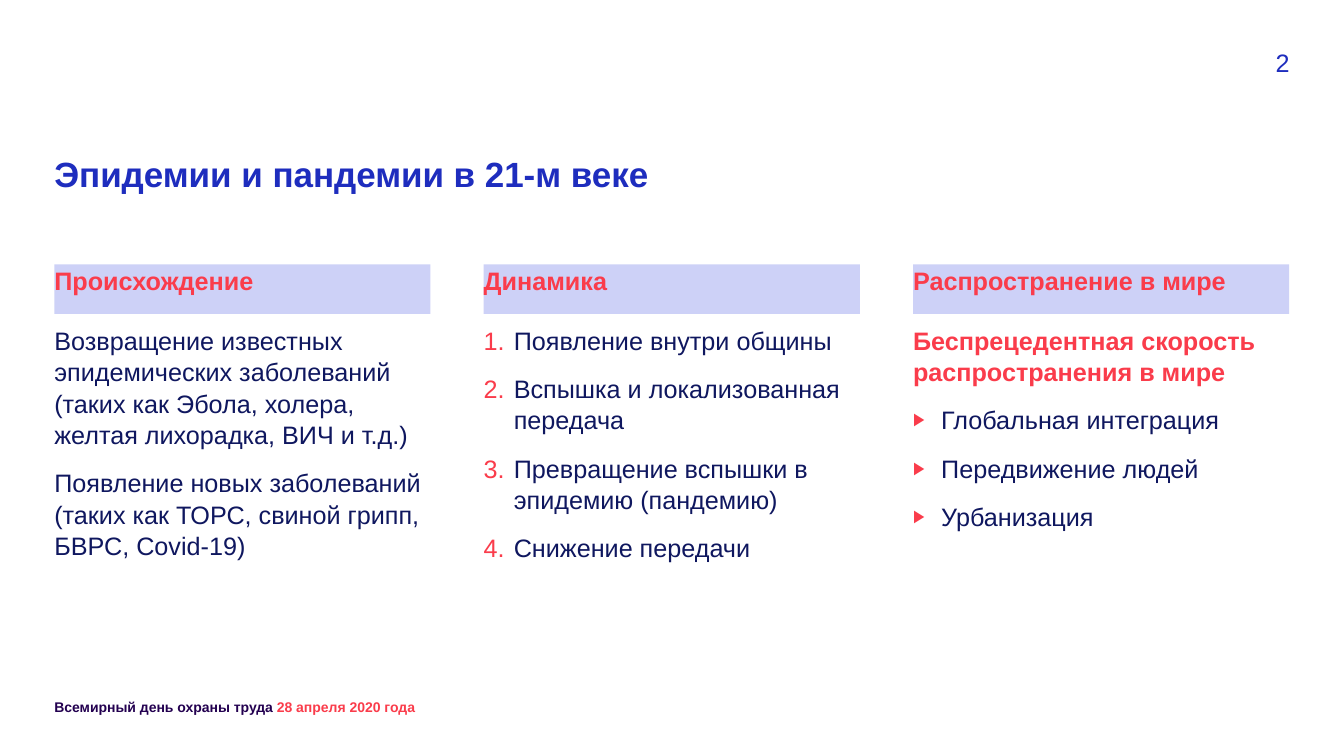
from dataclasses import dataclass

from lxml import etree
from pptx import Presentation
from pptx.dml.color import RGBColor
from pptx.enum.shapes import MSO_SHAPE
from pptx.enum.text import MSO_ANCHOR, PP_ALIGN
from pptx.oxml.ns import qn
from pptx.util import Cm, Pt

RECTANGLE = MSO_SHAPE.RECTANGLE
TOP = MSO_ANCHOR.TOP
LEFT, RIGHT = PP_ALIGN.LEFT, PP_ALIGN.RIGHT


@dataclass(frozen=True)
class Theme:
    """Colours, typeface and type sizes of the slide."""
    font: str = "Arial"
    blue: str = "1E2DBE"
    navy: str = "0F175F"
    purple: str = "230050"
    red: str = "FA3C4B"
    lavender: str = "CDD1F7"
    title_size: int = 25
    body_size: int = 18
    footer_size: int = 10


THEME = Theme()
MARKERS = {
    "number": (0.76, [("buFont", {"typeface": "+mj-lt"}),
                      ("buAutoNum", {"type": "arabicPeriod"})]),
    "arrow": (0.71, [("buSzPct", {"val": "70000"}),
                     ("buFont", {"typeface": "Arial"}),
                     ("buChar", {"char": "▶"})]),
}
COLUMNS = [
    ("Происхождение", [
        ("plain", "Возвращение известных эпидемических заболеваний "
                  "(таких как Эбола, холера, желтая лихорадка, ВИЧ и т.д.)"),
        ("plain", "Появление новых заболеваний "
                  "(таких как ТОРС, свиной грипп, БВРС, Covid-19)"),
    ]),
    ("Динамика", [
        ("number", "Появление внутри общины"),
        ("number", "Вспышка и локализованная передача"),
        ("number", "Превращение вспышки в эпидемию (пандемию)"),
        ("number", "Снижение передачи"),
    ]),
    ("Распространение в мире", [
        ("lead", "Беспрецедентная скорость распространения в мире"),
        ("arrow", "Глобальная интеграция"),
        ("arrow", "Передвижение людей"),
        ("arrow", "Урбанизация"),
    ]),
]


def prepare_frame(shape):
    """Return the shape's text frame, wrapped and without margins."""
    frame = shape.text_frame
    frame.word_wrap = True
    frame.vertical_anchor = TOP
    frame.margin_left = frame.margin_right = 0
    frame.margin_top = frame.margin_bottom = 0
    return frame


def add_frame(page, box):
    """Add a text box at left, top, width, height in centimetres."""
    return prepare_frame(page.shapes.add_textbox(*map(Cm, box)))


def style_para(para, size, color, bold=False, align=LEFT):
    """Set the alignment and font of a paragraph."""
    para.alignment = align
    para.font.name = THEME.font
    para.font.size = Pt(size)
    para.font.bold = bold
    para.font.color.rgb = RGBColor.from_string(color)


def add_marker(para, kind):
    """Give a paragraph a hanging red number or arrow."""
    indent, parts = MARKERS[kind]
    properties = para._p.get_or_add_pPr()
    properties.set("marL", str(Cm(indent)))
    properties.set("indent", str(-Cm(indent)))
    color = etree.SubElement(properties, qn("a:buClr"))
    etree.SubElement(color, qn("a:srgbClr"), val=THEME.red)
    for tag, attributes in parts:
        etree.SubElement(properties, qn(f"a:{tag}"), attributes)


def add_title(page, box, text):
    """Add the slide title."""
    para = add_frame(page, box).paragraphs[0]
    para.text = text
    para.line_spacing = 0.9
    style_para(para, THEME.title_size, THEME.blue, bold=True)


def add_page_number(page, box, text):
    """Add the page number, set to the right."""
    para = add_frame(page, box).paragraphs[0]
    para.text = text
    style_para(para, THEME.body_size, THEME.blue, align=RIGHT)


def add_heading(page, box, text):
    """Add a column heading on a tinted band."""
    band = page.shapes.add_shape(RECTANGLE, *map(Cm, box))
    band.shadow.inherit = False
    band.fill.solid()
    band.fill.fore_color.rgb = RGBColor.from_string(THEME.lavender)
    band.line.fill.background()
    para = prepare_frame(band).paragraphs[0]
    para.text = text
    para.line_spacing = 1.04
    style_para(para, THEME.body_size, THEME.red, bold=True)


def add_column(page, box, heading, items):
    """Add a heading band with its paragraphs below."""
    left, top, width, height = box
    band_height, body_offset = 1.25, 1.5
    add_heading(page, (left, top, width, band_height), heading)
    frame = add_frame(
        page, (left, top + body_offset, width, height - body_offset))
    for index, (kind, text) in enumerate(items):
        para = frame.add_paragraph() if index else frame.paragraphs[0]
        para.text = text
        para.line_spacing = 1.04
        para.space_before = Pt(6 if index else 0)
        para.space_after = Pt(6)
        if kind in MARKERS:
            add_marker(para, kind)
        if kind == "arrow":
            para.level = 1
        lead = kind == "lead"
        style_para(para, THEME.body_size,
                   THEME.red if lead else THEME.navy, bold=lead)


def add_footer(page, box, event, date):
    """Add the event name followed by its date in red."""
    para = add_frame(page, box).paragraphs[0]
    style_para(para, THEME.footer_size, THEME.purple, bold=True)
    for text, color in ((event, THEME.purple), (date, THEME.red)):
        span = para.add_run()
        span.text = text
        span.font.color.rgb = RGBColor.from_string(color)


def main():
    """Build the slide and save it."""
    deck = Presentation()
    deck.slide_width, deck.slide_height = Cm(33.87), Cm(19.05)
    page = deck.slides.add_slide(deck.slide_layouts[6])
    left, column_width, column_pitch = 1.37, 9.48, 10.82
    add_title(page, (left, 3.96, 31.13, 2), "Эпидемии и пандемии в 21-м веке")
    add_page_number(page, (31, 1.2, 1.5, 0.8), "2")
    for index, (heading, items) in enumerate(COLUMNS):
        box = (left + index * column_pitch, 6.66, column_width, 9.65)
        add_column(page, box, heading, items)
    add_footer(page, (left, 17.6, 15.57, 0.5),
               "Всемирный день охраны труда ", "28 апреля 2020 года")
    deck.save("out.pptx")


if __name__ == "__main__":
    main()
